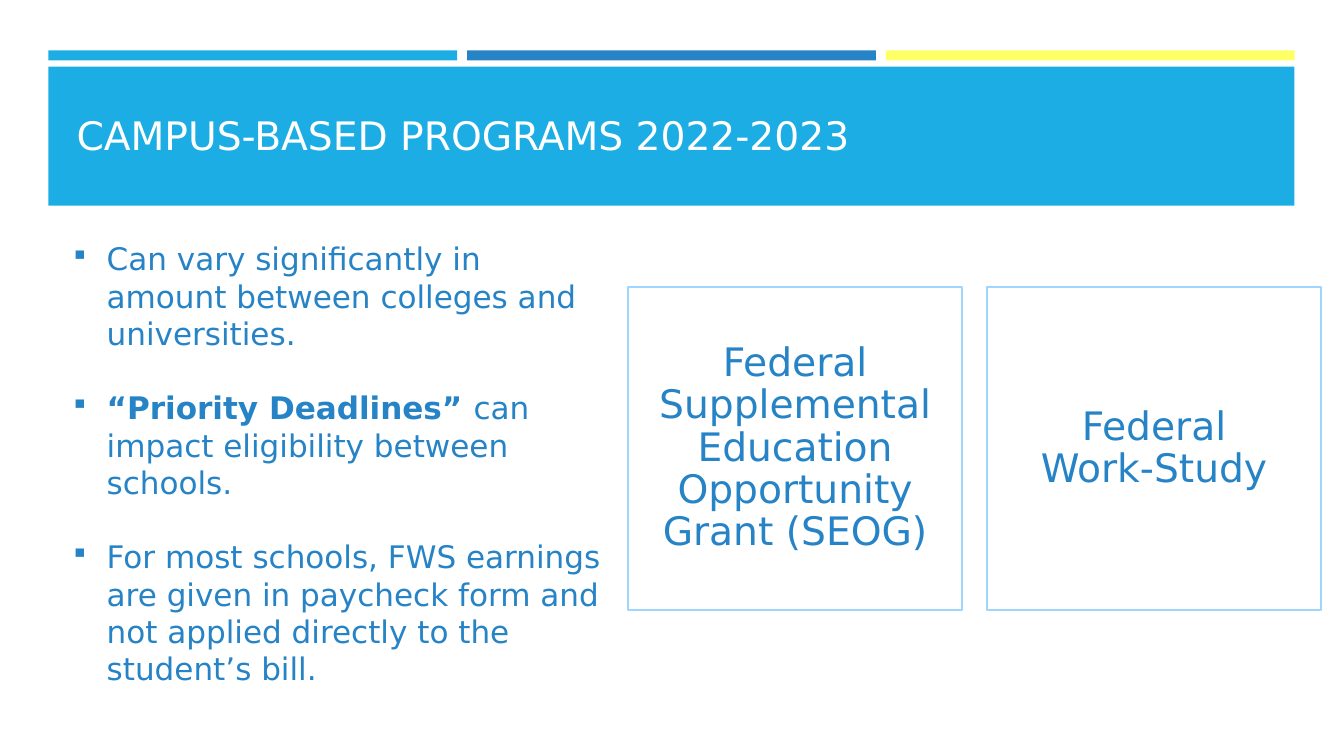
from dataclasses import dataclass

from lxml.etree import SubElement
from pptx import Presentation
from pptx.dml.color import RGBColor
from pptx.enum.shapes import MSO_SHAPE as Shape
from pptx.enum.text import MSO_ANCHOR as Anchor, PP_ALIGN as Align
from pptx.oxml.ns import qn
from pptx.util import Inches, Pt


@dataclass(frozen=True)
class Theme:
    font: str = "DejaVu Sans"
    sky: str = "1CADE4"
    blue: str = "2683C6"
    yellow: str = "FFFF66"
    pale: str = "9FD6FF"
    white: str = "FFFFFF"
    heading_size: float = 28
    body_size: float = 22.2
    paragraph_gap: float = 26.5
    outline: float = 1.75


THEME = Theme()

BULLETS = [
    [("Can vary significantly in amount between colleges and universities.", False)],
    [("“Priority Deadlines” ", True), ("can impact eligibility between schools.", False)],
    [("For most schools, FWS earnings are given in paycheck form "
      "and not applied directly to the student’s bill.", False)],
]

# Each card: label, label width, label height, label margin
CARDS = [
    ("Federal Supplemental Education Opportunity Grant (SEOG)", 2.75, 2.4, 0.02),
    ("Federal Work-Study", 2.45, 2.04, 0.03),
]


def add_rectangle(slide, left, top, width, height, fill=None, line=None):
    shape = slide.shapes.add_shape(
        Shape.RECTANGLE, Inches(left), Inches(top), Inches(width), Inches(height))
    shape.shadow.inherit = False
    if fill:
        shape.fill.solid()
        shape.fill.fore_color.rgb = RGBColor.from_string(fill)
    else:
        shape.fill.background()
    if line:
        shape.line.color.rgb = RGBColor.from_string(line)
        shape.line.width = Pt(THEME.outline)
    else:
        shape.line.fill.background()
    return shape


def add_text_frame(slide, left, top, width, height, anchor, margin=None):
    box = slide.shapes.add_textbox(
        Inches(left), Inches(top), Inches(width), Inches(height))
    text_frame = box.text_frame
    text_frame.word_wrap = True
    text_frame.vertical_anchor = anchor
    if margin is not None:
        text_frame.margin_left = text_frame.margin_right = Inches(margin)
        text_frame.margin_top = text_frame.margin_bottom = Inches(margin)
    return text_frame


def format_run(run, size, color, bold=False):
    run.font.name = THEME.font
    run.font.size = Pt(size)
    run.font.bold = bold
    run.font.color.rgb = RGBColor.from_string(color)


def add_square_bullet(paragraph, indent):
    properties = paragraph._p.get_or_add_pPr()
    properties.set("marL", str(Inches(indent)))
    properties.set("indent", str(-Inches(indent)))
    color = SubElement(properties, qn("a:buClr"))
    SubElement(color, qn("a:srgbClr"), val=THEME.blue)
    SubElement(properties, qn("a:buSzPct"), val="92000")
    SubElement(properties, qn("a:buFont"), typeface="Wingdings", charset="2")
    SubElement(properties, qn("a:buChar"), char="§")  # a square in Wingdings


def add_header(slide, left, top, width, title):
    # Three accent bars
    gap = 0.1
    bar_width = (width - 2 * gap) / 3
    for index, color in enumerate((THEME.sky, THEME.blue, THEME.yellow)):
        add_rectangle(slide, left + index * (bar_width + gap), top,
                      bar_width, 0.1, fill=color)

    # Title band
    band_top = top + 0.16
    add_rectangle(slide, left, band_top, width, 1.38, fill=THEME.sky)
    text_frame = add_text_frame(slide, left + 0.15, band_top + 0.14, width - 0.3,
                                1.08, Anchor.MIDDLE, margin=0.13)
    text_frame.text = title
    format_run(text_frame.paragraphs[0].runs[0], THEME.heading_size, THEME.white)


def add_bullet_list(slide, left, top, width, height):
    text_frame = add_text_frame(slide, left, top, width, height, Anchor.TOP)
    for index, parts in enumerate(BULLETS):
        paragraph = text_frame.add_paragraph() if index else text_frame.paragraphs[0]
        paragraph.space_after = Pt(THEME.paragraph_gap)
        add_square_bullet(paragraph, 0.33)
        for text, bold in parts:
            run = paragraph.add_run()
            run.text = text
            format_run(run, THEME.body_size, THEME.blue, bold)


def add_cards(slide, left, top, width, height):
    gap = 0.25
    card_width = (width - gap) / 2
    for index, (label, label_width, label_height, margin) in enumerate(CARDS):
        card_left = left + index * (card_width + gap)
        add_rectangle(slide, card_left, top, card_width, height, line=THEME.pale)

        # Label centred on its card
        text_frame = add_text_frame(
            slide, card_left + (card_width - label_width) / 2,
            top + (height - label_height) / 2,
            label_width, label_height, Anchor.MIDDLE, margin)
        text_frame.text = label
        paragraph = text_frame.paragraphs[0]
        paragraph.alignment = Align.CENTER
        paragraph.line_spacing = 0.9
        format_run(paragraph.runs[0], THEME.heading_size, THEME.blue)


def main():
    presentation = Presentation()
    presentation.slide_width = Inches(13.33)
    presentation.slide_height = Inches(7.5)
    slide = presentation.slides.add_slide(presentation.slide_layouts[6])

    add_header(slide, 0.48, 0.5, 12.36, "CAMPUS-BASED PROGRAMS 2022-2023")
    add_bullet_list(slide, 0.63, 2.33, 5.52, 4.62)
    add_cards(slide, 6.23, 2.85, 6.87, 3.2)

    presentation.save("out.pptx")


if __name__ == "__main__":
    main()
